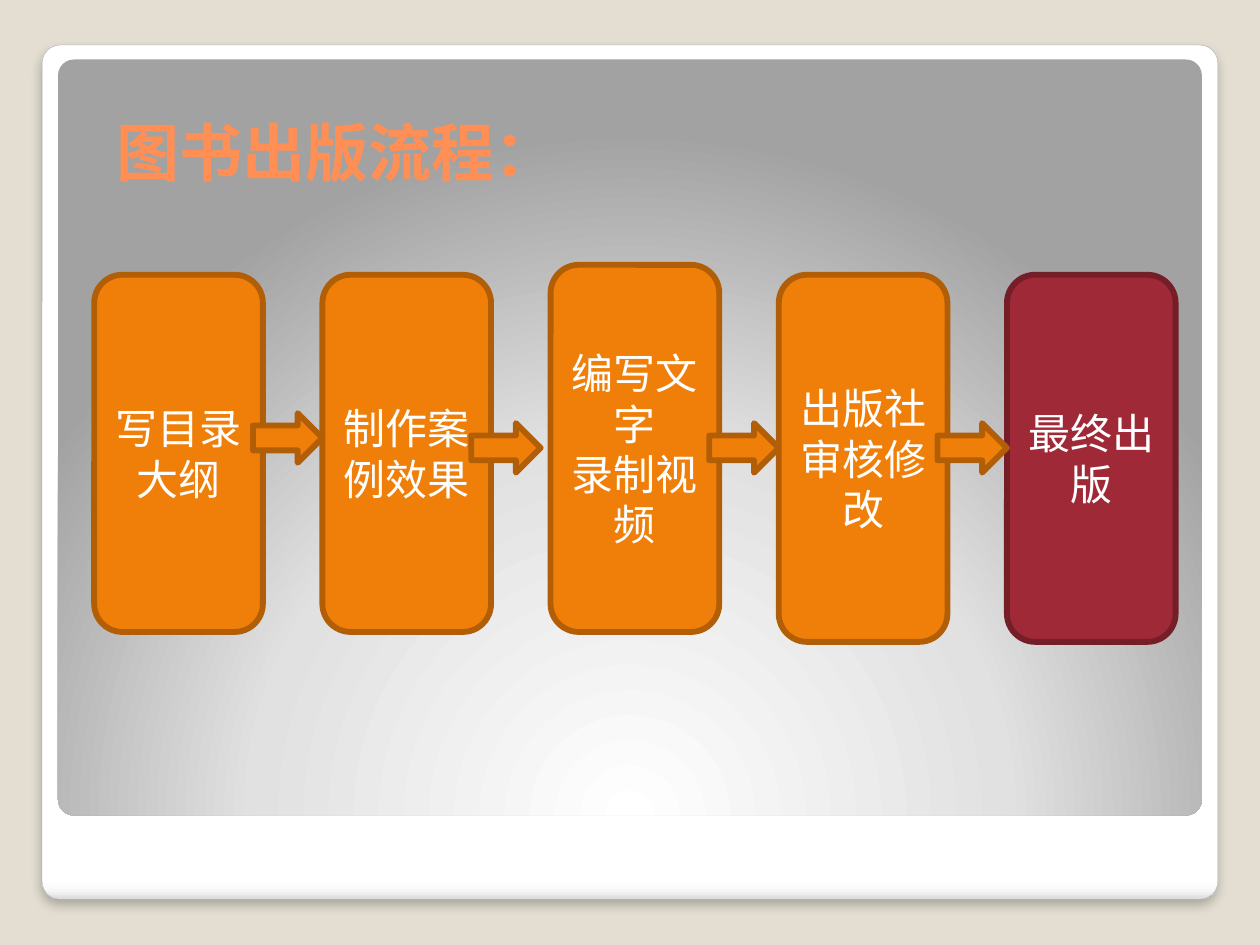
from dataclasses import dataclass

from lxml import etree
from pptx import Presentation
from pptx.dml.color import RGBColor
from pptx.enum.shapes import MSO_SHAPE as Shape
from pptx.enum.text import MSO_ANCHOR as Anchor, PP_ALIGN as Align
from pptx.oxml import parse_xml
from pptx.oxml.ns import nsdecls, qn
from pptx.util import Cm, Pt


@dataclass(frozen=True)
class Theme:
    font: str = "DejaVu Sans"
    background: str = "E3DED1"
    card_line: str = "A4A4A4"
    title: str = "FF8F55"
    text: str = "FFFFFF"
    step: tuple = ("F07F09", "B25E07")
    final_step: tuple = ("9F2936", "761E28")
    card_stops: tuple = ((0, "FFFFFF"), (98, "FFFFFF"), (99, "F7F7F7"), (100, "DADADA"))
    panel_stops: tuple = ((0, "FFFFFF"), (55, "E1E1E1"), (100, "A2A2A2"))
    title_size: int = 36
    step_size: int = 24
    outline: float = 3.35


THEME = Theme()
DOWNWARD = '<a:lin ang="5400000" scaled="0"/>'
FROM_BELOW = ('<a:path path="circle">'
              '<a:fillToRect l="50000" t="175000" r="50000" b="-75000"/></a:path>')

STEP_LEFT, STEP_PITCH, STEP_WIDTH = 1.9, 4.6, 3.4
# paragraphs, top and height (cm), fill and line
STEPS = [
    (["写目录大纲"], 5.54, 7.2, THEME.step),
    (["制作案例效果"], 5.54, 7.2, THEME.step),
    (["编写文字", "录制视频"], 5.34, 7.4, THEME.step),
    (["出版社审核修改"], 5.54, 7.4, THEME.step),
    (["最终出版"], 5.54, 7.4, THEME.final_step),
]
ARROWS = [(5.1, 8.33), (9.5, 8.53), (14.3, 8.53), (18.9, 8.53)]


def rgb(value):
    return RGBColor.from_string(value)


def add_shape(slide, kind, left, top, width, height):
    shape = slide.shapes.add_shape(kind, Cm(left), Cm(top), Cm(width), Cm(height))
    shape.shadow.inherit = False
    return shape


def paint(shape, colors):
    fill, line = colors
    shape.fill.solid()
    shape.fill.fore_color.rgb = rgb(fill)
    shape.line.color.rgb = rgb(line)
    shape.line.width = Pt(THEME.outline)


def set_gradient(shape, stops, direction):
    stop_xml = "".join(
        f'<a:gs pos="{position * 1000}"><a:srgbClr val="{color}"/></a:gs>'
        for position, color in stops)
    gradient = parse_xml(f'<a:gradFill {nsdecls("a")} rotWithShape="1">'
                         f'<a:gsLst>{stop_xml}</a:gsLst>{direction}</a:gradFill>')
    shape.element.spPr.find(qn("a:prstGeom")).addnext(gradient)


def add_soft_shadow(shape):
    effects = shape.element.spPr.find(qn("a:effectLst"))
    shadow = etree.SubElement(effects, qn("a:outerShdw"), blurRad=str(Pt(6)),
                              dist=str(Pt(4)), dir="5400000", rotWithShape="0")
    color = etree.SubElement(shadow, qn("a:srgbClr"), val="000000")
    etree.SubElement(color, qn("a:alpha"), val="25000")


def add_run(paragraph, text, size, color, bold=False):
    run = paragraph.add_run()
    run.text = text
    run.font.name = THEME.font
    run.font.size = Pt(size)
    run.font.bold = bold
    run.font.color.rgb = rgb(color)


def add_frame(slide):
    """Draw the white card and the grey panel on it."""
    card = add_shape(slide, Shape.ROUNDED_RECTANGLE, 0.85, 0.91, 23.7, 17.22)
    set_gradient(card, THEME.card_stops, DOWNWARD)
    card.line.color.rgb = rgb(THEME.card_line)
    card.line.width = Pt(0.16)
    add_soft_shadow(card)
    panel = add_shape(slide, Shape.ROUNDED_RECTANGLE, 1.17, 1.2, 23.06, 15.24)
    set_gradient(panel, THEME.panel_stops, FROM_BELOW)
    panel.line.fill.background()
    for shape in (card, panel):
        shape.adjustments[0] = 0.021


def add_title(slide, text):
    box = slide.shapes.add_textbox(Cm(2.1), Cm(2.05), Cm(20.8), Cm(2))
    frame = box.text_frame
    frame.word_wrap = True
    frame.vertical_anchor = Anchor.MIDDLE
    add_run(frame.paragraphs[0], text, THEME.title_size, THEME.title, bold=True)


def add_step(slide, index, texts, top, height, colors):
    left = STEP_LEFT + index * STEP_PITCH
    shape = add_shape(slide, Shape.ROUNDED_RECTANGLE, left, top, STEP_WIDTH, height)
    paint(shape, colors)
    frame = shape.text_frame
    frame.word_wrap = True
    frame.vertical_anchor = Anchor.MIDDLE
    for number, text in enumerate(texts):
        paragraph = frame.add_paragraph() if number else frame.paragraphs[0]
        paragraph.alignment = Align.CENTER
        add_run(paragraph, text, THEME.step_size, THEME.text)


def add_arrow(slide, left, top):
    paint(add_shape(slide, Shape.RIGHT_ARROW, left, top, 1.4, 1), THEME.step)


def main():
    presentation = Presentation()
    presentation.slide_width, presentation.slide_height = Cm(25.4), Cm(19.05)
    slide = presentation.slides.add_slide(presentation.slide_layouts[6])
    slide.background.fill.solid()
    slide.background.fill.fore_color.rgb = rgb(THEME.background)
    add_frame(slide)
    add_title(slide, "图书出版流程：")
    for index, step in enumerate(STEPS):
        add_step(slide, index, *step)
    for left, top in ARROWS:
        add_arrow(slide, left, top)
    presentation.save("out.pptx")


if __name__ == "__main__":
    main()
